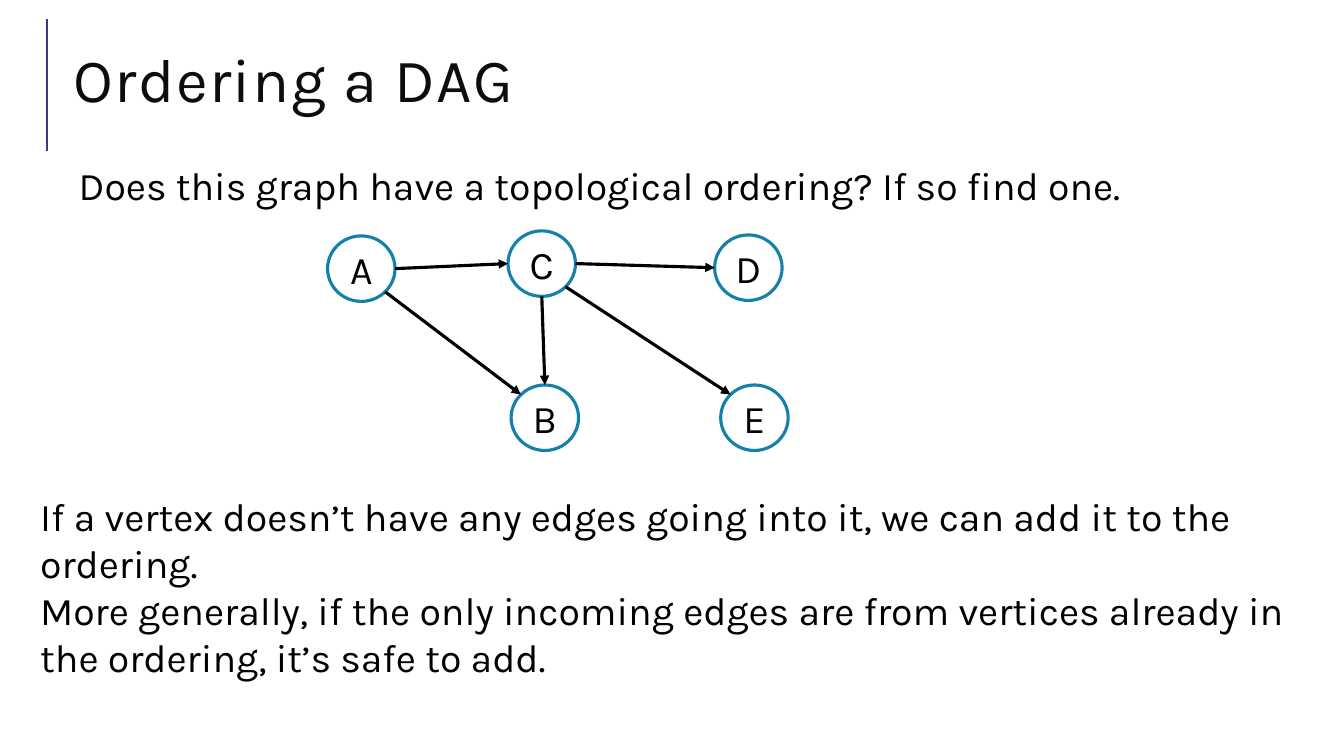
"""Build the slide on ordering a directed acyclic graph."""
import dataclasses
import math

import lxml.etree
import pptx
import pptx.dml.color
import pptx.enum.shapes
import pptx.enum.text
import pptx.oxml.ns
import pptx.util

Pt = pptx.util.Pt
qn = pptx.oxml.ns.qn


@dataclasses.dataclass(frozen=True)
class Theme:
    font: str = "Karla"
    title_size: int = 44
    text_size: int = 28
    title_color: str = "0D0D0D"
    ink: str = "000000"
    paper: str = "FFFFFF"
    accent: str = "4C3282"
    vertex_line: str = "1580A9"
    rule_width: float = 1.5
    graph_width: float = 2.25
    vertex_width: float = 48.2
    vertex_height: float = 46.8


class SlideBuilder:
    def __init__(self, slide, theme):
        self.slide = slide
        self.theme = theme

    def color(self, name):
        return pptx.dml.color.RGBColor.from_string(name)

    def place(self, shape, left, top, width, height):
        shape.left, shape.top = Pt(left), Pt(top)
        shape.width, shape.height = Pt(width), Pt(height)

    def set_text(self, frame, lines, size, color, alignment=pptx.enum.text.PP_ALIGN.LEFT):
        frame.text = "\n".join(lines)
        frame.word_wrap = True
        for paragraph in frame.paragraphs:
            paragraph.alignment = alignment
            paragraph.font.name = self.theme.font
            paragraph.font.size = Pt(size)
            paragraph.font.color.rgb = self.color(color)

    def title(self, text, box):
        shape = self.slide.shapes.title
        self.place(shape, *box)
        frame = shape.text_frame
        self.set_text(frame, [text], self.theme.title_size, self.theme.title_color)
        frame.auto_size = pptx.enum.text.MSO_AUTO_SIZE.NONE
        frame.vertical_anchor = pptx.enum.text.MSO_ANCHOR.MIDDLE
        paragraph = frame.paragraphs[0]
        paragraph.line_spacing = 0.8
        paragraph.runs[0]._r.get_or_add_rPr().set("spc", "100")

    def body(self, text, box):
        shape = self.slide.placeholders[1]
        self.place(shape, *box)
        frame = shape.text_frame
        self.set_text(frame, [text], self.theme.text_size, self.theme.ink)
        frame.auto_size = pptx.enum.text.MSO_AUTO_SIZE.NONE
        frame.margin_left = frame.margin_right = Pt(3.6)
        frame.margin_top = frame.margin_bottom = Pt(3.6)
        paragraph = frame.paragraphs[0]
        paragraph.line_spacing = 0.9
        paragraph.space_before, paragraph.space_after = Pt(12), Pt(2)
        properties = paragraph._p.get_or_add_pPr()
        properties.set("marL", str(Pt(7.2)))
        properties.set("indent", "0")
        properties.insert_element_before(
            properties.makeelement(qn("a:buNone")), "a:tabLst", "a:defRPr", "a:extLst")

    def text_box(self, lines, box):
        frame = self.slide.shapes.add_textbox(*map(Pt, box)).text_frame
        self.set_text(frame, lines, self.theme.text_size, self.theme.ink)
        frame.auto_size = pptx.enum.text.MSO_AUTO_SIZE.SHAPE_TO_FIT_TEXT

    def line(self, shapes, start, end, color, width, arrow=False):
        connector = shapes.add_connector(
            pptx.enum.shapes.MSO_CONNECTOR.STRAIGHT, *map(Pt, (*start, *end)))
        connector.line.color.rgb = self.color(color)
        connector.line.width = Pt(width)
        properties = connector._element.spPr
        if arrow:
            lxml.etree.SubElement(properties.find(qn("a:ln")), qn("a:tailEnd"), type="triangle")
        lxml.etree.SubElement(properties, qn("a:effectLst"))

    def vertex(self, shapes, name, center):
        theme = self.theme
        width, height = theme.vertex_width, theme.vertex_height
        box = (center[0] - width / 2, center[1] - height / 2, width, height)
        shape = shapes.add_shape(pptx.enum.shapes.MSO_SHAPE.OVAL, *map(Pt, box))
        shape.shadow.inherit = False
        shape.fill.solid()
        shape.fill.fore_color.rgb = self.color(theme.paper)
        shape.line.color.rgb = self.color(theme.vertex_line)
        shape.line.width = Pt(theme.graph_width)
        self.set_text(shape.text_frame, [name], theme.text_size, theme.ink,
                      pptx.enum.text.PP_ALIGN.CENTER)
        shape.text_frame.vertical_anchor = pptx.enum.text.MSO_ANCHOR.MIDDLE

    def rim(self, center, degrees):
        angle = math.radians(degrees)
        return (center[0] + self.theme.vertex_width / 2 * math.cos(angle),
                center[1] + self.theme.vertex_height / 2 * math.sin(angle))

    def graph(self, vertices, edges):
        shapes = self.slide.shapes.add_group_shape().shapes
        for name, center in vertices.items():
            self.vertex(shapes, name, center)
        for source, target, degrees in edges:
            self.line(shapes, self.rim(vertices[source], degrees),
                      self.rim(vertices[target], degrees + 180),
                      self.theme.ink, self.theme.graph_width, arrow=True)


def main():
    presentation = pptx.Presentation()
    presentation.slide_width, presentation.slide_height = Pt(960), Pt(540)
    slide = presentation.slides.add_slide(presentation.slide_layouts[1])
    theme = Theme()
    builder = SlideBuilder(slide, theme)

    builder.line(slide.shapes, (33.8, 108), (33.8, 13.7), theme.accent, theme.rule_width)
    builder.title("Ordering a DAG", (45.4, 20.9, 880.6, 79.9))
    builder.body("Does this graph have a topological ordering? If so find one.",
                 (45.4, 115.2, 880.6, 40.3))
    vertices = {
        "A": (258.1, 191.9),
        "B": (389.2, 298.4),
        "C": (387, 188.3),
        "E": (538.9, 298.4),
        "D": (534.6, 191.2),
    }
    edges = [("A", "B", 45), ("A", "C", 0), ("C", "B", 90), ("C", "D", 0), ("C", "E", 45)]
    builder.graph(vertices, edges)
    builder.text_box([
        "If a vertex doesn’t have any edges going into it, we can add it to the ordering.",
        "More generally, if the only incoming edges are from vertices already in the ordering, "
        "it’s safe to add.",
    ], (21.6, 347.8, 928.1, 211))
    presentation.save("out.pptx")


if __name__ == "__main__":
    main()
